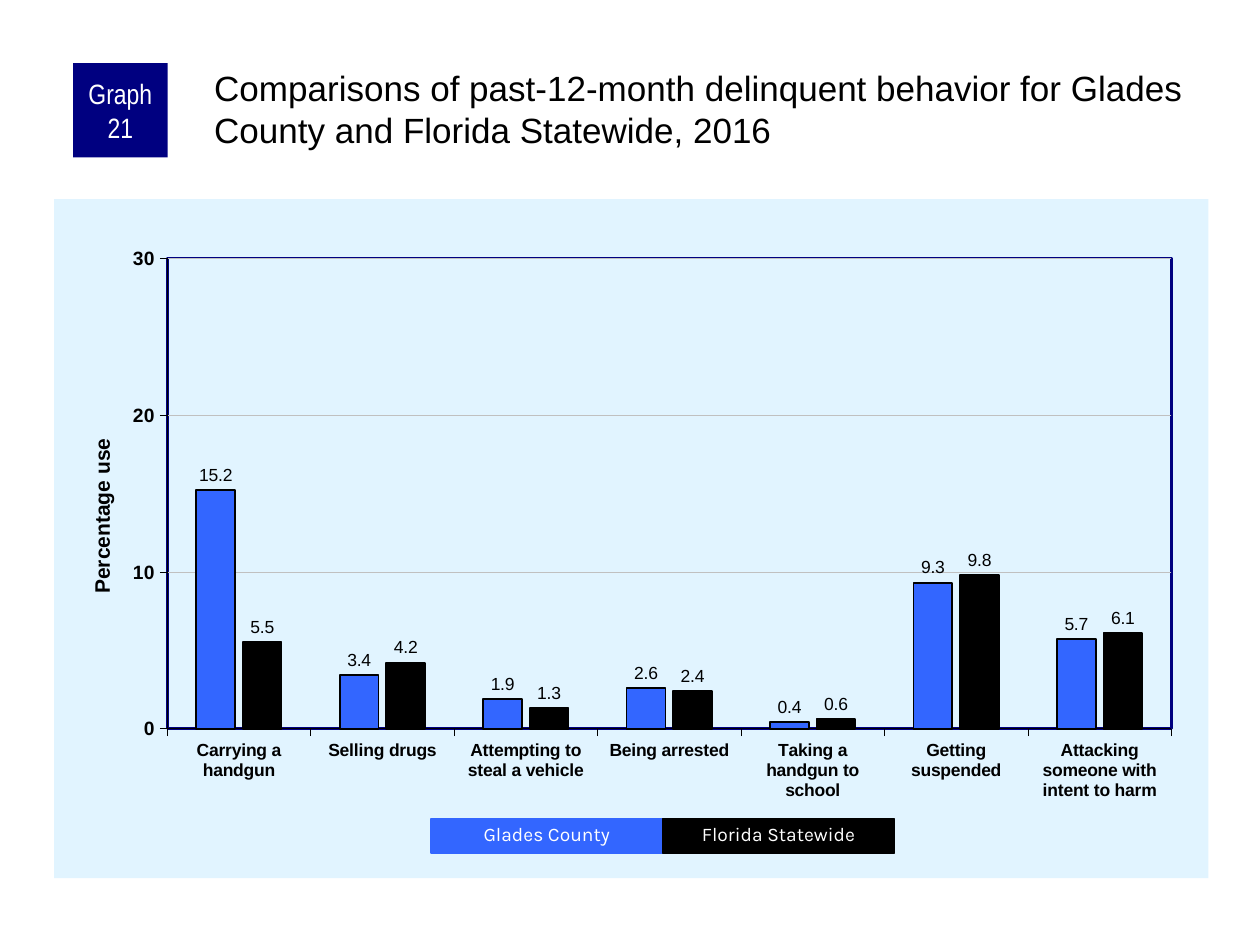
"""Build the slide comparing delinquent behavior in Glades County and Florida."""
from lxml import etree
from pptx import Presentation
from pptx.chart.data import CategoryChartData
from pptx.dml.color import RGBColor
from pptx.enum.chart import XL_CHART_TYPE, XL_LABEL_POSITION, XL_TICK_MARK
from pptx.enum.shapes import MSO_SHAPE
from pptx.enum.text import MSO_ANCHOR, PP_ALIGN
from pptx.oxml import parse_xml
from pptx.oxml.ns import nsdecls, qn
from pptx.util import Inches, Pt

NAVY = RGBColor(0x00, 0x00, 0x80)
BLUE = RGBColor(0x33, 0x66, 0xFF)
BLACK = RGBColor(0x00, 0x00, 0x00)
WHITE = RGBColor(0xFF, 0xFF, 0xFF)
PALE_BLUE = RGBColor(0xE1, 0xF4, 0xFF)
SILVER = RGBColor(0xC0, 0xC0, 0xC0)


def write(frame, text, size, font="Arial", color=BLACK, bold=False, align=PP_ALIGN.LEFT,
          anchor=MSO_ANCHOR.TOP, insets=(0.1, 0.05, 0.1, 0.05), spacing=None):
    frame.word_wrap = True
    frame.vertical_anchor = anchor
    frame.margin_left, frame.margin_top, frame.margin_right, frame.margin_bottom = map(Inches, insets)
    paragraph = frame.paragraphs[0]
    paragraph.alignment = align
    paragraph.line_spacing = spacing
    run = paragraph.add_run()
    run.text = text
    run.font.size, run.font.name, run.font.bold = Pt(size), font, bold
    run.font.color.rgb = color


def manual_layout(target, **places):
    layout = target.find(qn("c:layout"))
    if layout is None:
        layout = etree.Element(qn("c:layout"))
        text = target.find(qn("c:tx"))
        if text is None:
            target.insert(0, layout)
        else:
            text.addnext(layout)
    manual = etree.SubElement(layout, qn("c:manualLayout"))
    for tag, value in places.items():
        etree.SubElement(manual, qn(f"c:{tag}")).set("val", str(value))


prs = Presentation()
prs.slide_width, prs.slide_height = Inches(10), Inches(7.5)
slide = prs.slides.add_slide(prs.slide_layouts[6])

behaviors = CategoryChartData(number_format="0.0")
behaviors.categories = [
    "Carrying a handgun", "Selling drugs", "Attempting to steal a vehicle", "Being arrested",
    "Taking a handgun to school", "Getting suspended", "Attacking someone with intent to harm",
]
behaviors.add_series("Series 1", (15.2, 3.4, 1.9, 2.6, 0.4, 9.3, 5.7))
behaviors.add_series("Series 2", (5.5, 4.2, 1.3, 2.4, 0.6, 9.8, 6.1))
chart = slide.shapes.add_chart(
    XL_CHART_TYPE.COLUMN_CLUSTERED, Inches(0.43), Inches(1.58), Inches(9.16), Inches(5.39), behaviors
).chart
chart.has_title = chart.has_legend = False
chart.font.size, chart.font.name = Pt(11.5), "Arial"
chart.font.color.rgb = BLACK

chart_xml = chart._chartSpace.find(qn("c:chart"))
chart_xml.addnext(parse_xml(
    f'<c:spPr {nsdecls("c", "a")}><a:solidFill><a:srgbClr val="{PALE_BLUE}"/></a:solidFill>'
    '<a:ln><a:noFill/></a:ln></c:spPr>'))
plot_area = chart_xml.find(qn("c:plotArea"))
manual_layout(plot_area, layoutTarget="inner", xMode="edge", yMode="edge",
              x=0.098, y=0.087, w=0.87, h=0.693)
plot_area.append(parse_xml(
    f'<c:spPr {nsdecls("c", "a")}><a:noFill/><a:ln w="{Pt(1.5)}"><a:solidFill>'
    f'<a:srgbClr val="{NAVY}"/></a:solidFill></a:ln></c:spPr>'))

for axis, size in ((chart.category_axis, 10), (chart.value_axis, 11)):
    axis.major_tick_mark = XL_TICK_MARK.OUTSIDE
    axis.minor_tick_mark = XL_TICK_MARK.NONE
    axis.format.line.color.rgb = BLACK
    axis.format.line.width = Pt(0.25)
    labels = axis.tick_labels.font
    labels.size, labels.name, labels.bold = Pt(size), "Arial", True
    labels.color.rgb = BLACK

percentage = chart.value_axis
percentage.minimum_scale, percentage.maximum_scale, percentage.major_unit = 0, 30, 10
percentage.tick_labels.number_format = "0"
percentage.tick_labels.number_format_is_linked = False
percentage.major_gridlines.format.line.color.rgb = SILVER
percentage.major_gridlines.format.line.width = Pt(0.25)
percentage_title = percentage.axis_title
write(percentage_title.text_frame, "Percentage use", 12, bold=True, align=PP_ALIGN.CENTER)
title_body = percentage_title.text_frame._txBody.find(qn("a:bodyPr"))
title_body.set("rot", "-5400000")
title_body.set("vert", "horz")
manual_layout(percentage_title._element, xMode="edge", yMode="edge", x=0.027, y=0.347)

columns = chart.plots[0]
columns.gap_width, columns.overlap, columns.vary_by_categories = 150, -20, False
for series, color in zip(columns.series, (BLUE, BLACK)):
    series.format.fill.solid()
    series.format.fill.fore_color.rgb = color
    series.format.line.color.rgb = BLACK
    series.format.line.width = Pt(1)
    values = series.data_labels
    values.show_value = True
    values.number_format, values.number_format_is_linked = "0.0", False
    values.position = XL_LABEL_POSITION.OUTSIDE_END
    values.font.size, values.font.name = Pt(10), "Arial"
    values.font.color.rgb = BLACK

headline = slide.shapes.add_textbox(Inches(1.67), Inches(0.5), Inches(7.92), Inches(0.83))
write(headline.text_frame,
      "Comparisons of past-12-month delinquent behavior for Glades County and Florida Statewide, 2016",
      20, insets=(0.03, 0.03, 0, 0))

number_format = dict(size=16, font="Arial Narrow", anchor=MSO_ANCHOR.MIDDLE, insets=(0.05, 0, 0.05, 0))
key_format = dict(size=11, font="Karla", spacing=0.9)
for text, left, top, width, height, color, outlined, text_format in (
    ("Graph 21", 0.58, 0.5, 0.75, 0.75, NAVY, False, number_format),
    ("Glades County", 3.42, 6.5, 1.84, 0.27, BLUE, True, key_format),
    ("Florida Statewide", 5.26, 6.5, 1.84, 0.27, BLACK, True, key_format),
):
    block = slide.shapes.add_shape(
        MSO_SHAPE.RECTANGLE, Inches(left), Inches(top), Inches(width), Inches(height))
    block.shadow.inherit = False
    block.fill.solid()
    block.fill.fore_color.rgb = color
    if outlined:
        block.line.color.rgb = color
        block.line.width = Pt(0.75)
    else:
        block.line.fill.background()
    write(block.text_frame, text, color=WHITE, align=PP_ALIGN.CENTER, **text_format)

prs.save("out.pptx")
